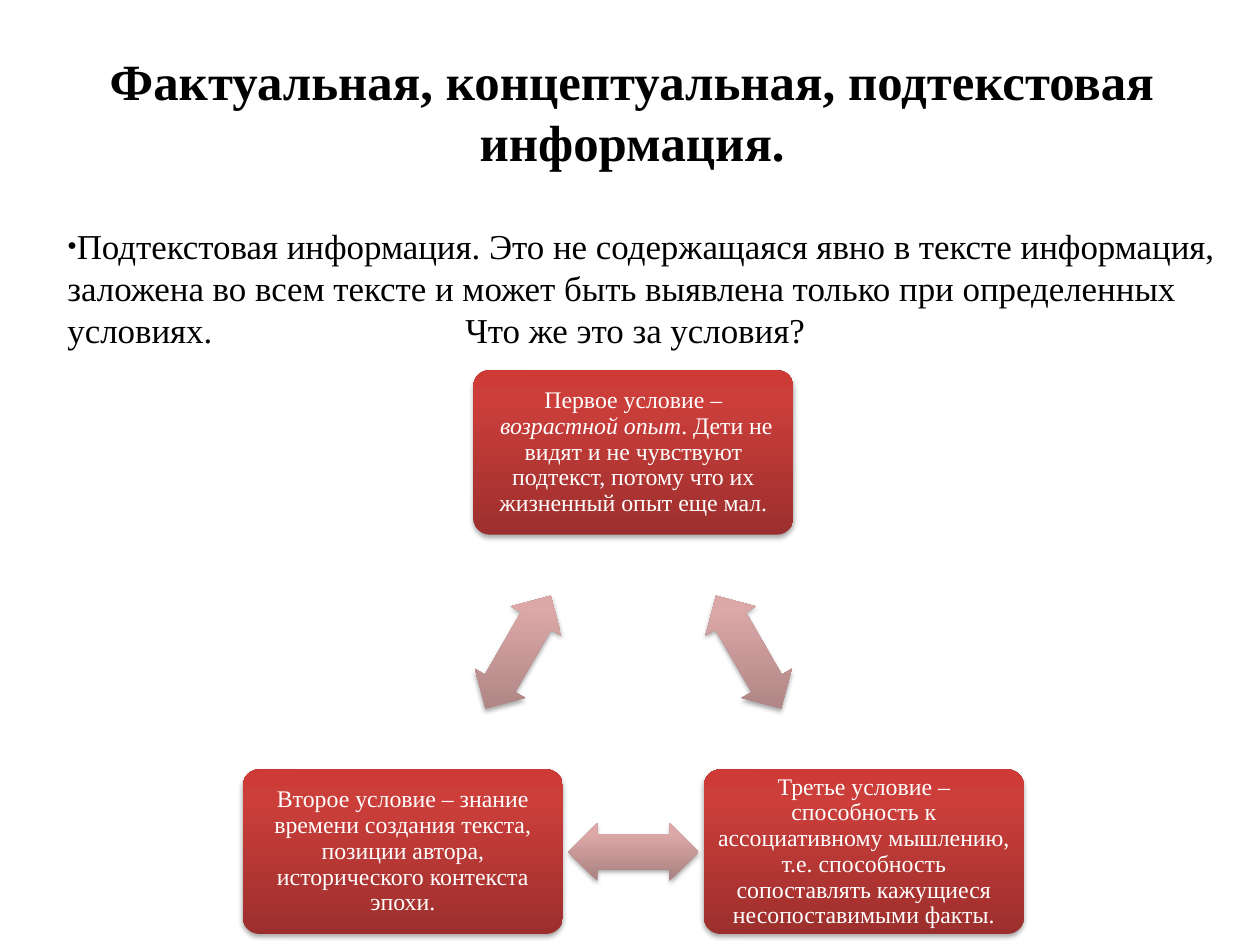
"""Build a slide on subtext information and the three conditions for reading it."""
from dataclasses import dataclass
from math import cos, radians, sin

from lxml.etree import SubElement
from pptx import Presentation
from pptx.dml.color import RGBColor
from pptx.enum.shapes import MSO_SHAPE as Preset
from pptx.enum.text import MSO_ANCHOR as Anchor, MSO_AUTO_SIZE as AutoSize, PP_ALIGN as Align
from pptx.oxml.ns import qn
from pptx.util import Cm, Emu, Inches, Pt


@dataclass(frozen=True)
class Theme:
    font: str = "Times New Roman"
    ink: str = "000000"
    paper: str = "FFFFFF"
    red: tuple = ((0, "9C2F2D"), (80, "CB3E3A"), (100, "CE3B37"))
    rose: tuple = ((0, "A98180"), (80, "DBA7A7"), (100, "DDA7A6"))
    title_size: int = 32
    body_size: int = 22
    condition_size: int = 15


@dataclass(frozen=True)
class Area:
    left: float
    top: float
    width: float
    height: float


@dataclass(frozen=True)
class Phrase:
    text: str
    italic: bool = False


@dataclass(frozen=True)
class Condition:
    phrases: tuple


THEME = Theme()
SLIDE_WIDTH, SLIDE_HEIGHT = Cm(28), Cm(21)
TITLE_AREA = Area(5.17, 3.34, 90.02, 16.69)
BODY_AREA = Area(5.35, 23.74, 94.37, 69.04)
QUESTION_TAB = 31.58
CYCLE_CENTER = (50.27, 76.05)
CYCLE_RADIUS = 28.17
CONDITION_SIZE = (25.41, 17.41)
ARROW_SIZE = (10.34, 6.17)
HARD_SPACE = chr(160)

TITLE = "Фактуальная, концептуальная, подтекстовая информация."
DEFINITION = (
    "Подтекстовая информация. Это не содержащаяся явно в тексте информация, "
    "заложена во всем тексте и может быть выявлена только при определенных условиях."
)
QUESTION = "Что же это за условия?"
CONDITIONS = (
    Condition((
        Phrase("Первое условие –" + HARD_SPACE),
        Phrase("возрастной опыт", italic=True),
        Phrase(". Дети не видят и не чувствуют подтекст, потому что их жизненный опыт еще мал."),
    )),
    Condition((Phrase(
        "Третье условие – способность к ассоциативному мышлению, т.е. способность "
        "сопоставлять кажущиеся несопоставимыми факты."),)),
    Condition((Phrase(
        "Второе условие – знание времени создания текста, позиции автора, "
        "исторического контекста эпохи."),)),
)


def across(percent: float) -> Emu:
    """Turn a percentage of the slide width into a length."""
    return Emu(round(SLIDE_WIDTH * percent / 100))


def down(percent: float) -> Emu:
    """Turn a percentage of the slide height into a length."""
    return Emu(round(SLIDE_HEIGHT * percent / 100))


def assign(target, formats: dict) -> None:
    """Set every named attribute on the target."""
    for name, value in formats.items():
        setattr(target, name, value)


def add_phrase(paragraph, phrase: Phrase, size: int, color: str, bold: bool = False) -> None:
    """Append one formatted run to a paragraph."""
    run = paragraph.add_run()
    run.text = phrase.text
    assign(run.font, {"name": THEME.font, "size": Pt(size), "bold": bold, "italic": phrase.italic})
    run.font.color.rgb = RGBColor.from_string(color)


def prepare_frame(frame, anchor: Anchor, inset: float) -> None:
    """Give a text frame its wrapping, anchor and equal insets."""
    margin = Inches(inset)
    assign(frame, {
        "word_wrap": True, "auto_size": AutoSize.NONE, "vertical_anchor": anchor,
        "margin_left": margin, "margin_right": margin,
        "margin_top": margin, "margin_bottom": margin,
    })


def place(placeholder, area: Area, anchor: Anchor):
    """Move a placeholder to its area and return its first paragraph."""
    assign(placeholder, {
        "left": across(area.left), "top": down(area.top),
        "width": across(area.width), "height": down(area.height),
    })
    prepare_frame(placeholder.text_frame, anchor, 0)
    paragraph = placeholder.text_frame.paragraphs[0]
    paragraph.space_before = Pt(0)
    return paragraph


def add_bullet_and_tab(paragraph, tab: Emu) -> None:
    """Add a small round bullet and one tab stop."""
    properties = paragraph._p.get_or_add_pPr()
    properties.set("marL", "0")
    properties.set("indent", "0")
    SubElement(properties, qn("a:buSzPct"), val="45000")
    SubElement(properties, qn("a:buFont"), typeface=THEME.font)
    SubElement(properties, qn("a:buChar"), char="●")
    stops = SubElement(properties, qn("a:tabLst"))
    SubElement(stops, qn("a:tab"), pos=str(tab), algn="l")


def fill_upward(shape, stops: tuple) -> None:
    """Fill a shape with a gradient that starts at the bottom of the slide."""
    shape.fill.gradient()
    gradient = shape._element.spPr.find(qn("a:gradFill"))
    for child in list(gradient):
        gradient.remove(child)
    gradient.set("rotWithShape", "0")
    colors = SubElement(gradient, qn("a:gsLst"))
    for position, color in stops:
        stop = SubElement(colors, qn("a:gs"), pos=str(position * 1000))
        SubElement(stop, qn("a:srgbClr"), val=color)
    SubElement(gradient, qn("a:lin"), ang="16200000", scaled="0")


def cast_shadow(shape) -> None:
    """Give a shape a soft shadow straight below it."""
    shape.shadow.inherit = False
    effects = shape._element.spPr.find(qn("a:effectLst"))
    shadow = SubElement(effects, qn("a:outerShdw"), blurRad=str(Pt(3.1)), dist=str(Pt(1.8)),
                        dir="5400000", rotWithShape="0")
    color = SubElement(shadow, qn("a:srgbClr"), val=THEME.ink)
    SubElement(color, qn("a:alpha"), val="35000")


def add_on_cycle(slide, preset: Preset, size: tuple, radius: float, angle: float, stops: tuple):
    """Draw a shape centred on the cycle at an angle in degrees."""
    width, height = across(size[0]), down(size[1])
    center_x = across(CYCLE_CENTER[0]) + down(radius) * cos(radians(angle))
    center_y = down(CYCLE_CENTER[1]) + down(radius) * sin(radians(angle))
    shape = slide.shapes.add_shape(
        preset, round(center_x - width / 2), round(center_y - height / 2), width, height)
    fill_upward(shape, stops)
    shape.line.fill.background()
    cast_shadow(shape)
    return shape


def add_condition(slide, condition: Condition, angle: float) -> None:
    """Draw one condition box with its text."""
    box = add_on_cycle(slide, Preset.ROUNDED_RECTANGLE, CONDITION_SIZE, CYCLE_RADIUS, angle, THEME.red)
    box.adjustments[0] = 0.1
    prepare_frame(box.text_frame, Anchor.MIDDLE, 0.06)
    paragraph = box.text_frame.paragraphs[0]
    assign(paragraph, {"alignment": Align.CENTER, "line_spacing": 0.9})
    for phrase in condition.phrases:
        add_phrase(paragraph, phrase, THEME.condition_size, THEME.paper)


def add_link(slide, angle: float) -> None:
    """Draw the double arrow halfway between two neighbouring conditions."""
    arrow = add_on_cycle(slide, Preset.LEFT_RIGHT_ARROW, ARROW_SIZE, CYCLE_RADIUS / 2, angle, THEME.rose)
    arrow.adjustments[0], arrow.adjustments[1] = 0.6, 0.5
    arrow.rotation = angle + 90


def main() -> None:
    """Build and save the presentation."""
    deck = Presentation()
    deck.slide_width, deck.slide_height = SLIDE_WIDTH, SLIDE_HEIGHT
    slide = deck.slides.add_slide(deck.slide_layouts[1])
    heading = place(slide.shapes.title, TITLE_AREA, Anchor.MIDDLE)
    heading.alignment = Align.CENTER
    add_phrase(heading, Phrase(TITLE), THEME.title_size, THEME.ink, bold=True)
    definition = place(slide.placeholders[1], BODY_AREA, Anchor.TOP)
    add_bullet_and_tab(definition, across(QUESTION_TAB))
    add_phrase(definition, Phrase(f"{DEFINITION}\t{QUESTION}"), THEME.body_size, THEME.ink)
    step = 360 / len(CONDITIONS)
    for index, condition in enumerate(CONDITIONS):
        angle = index * step - 90
        add_condition(slide, condition, angle)
        add_link(slide, angle + step / 2)
    deck.save("out.pptx")


if __name__ == "__main__":
    main()
